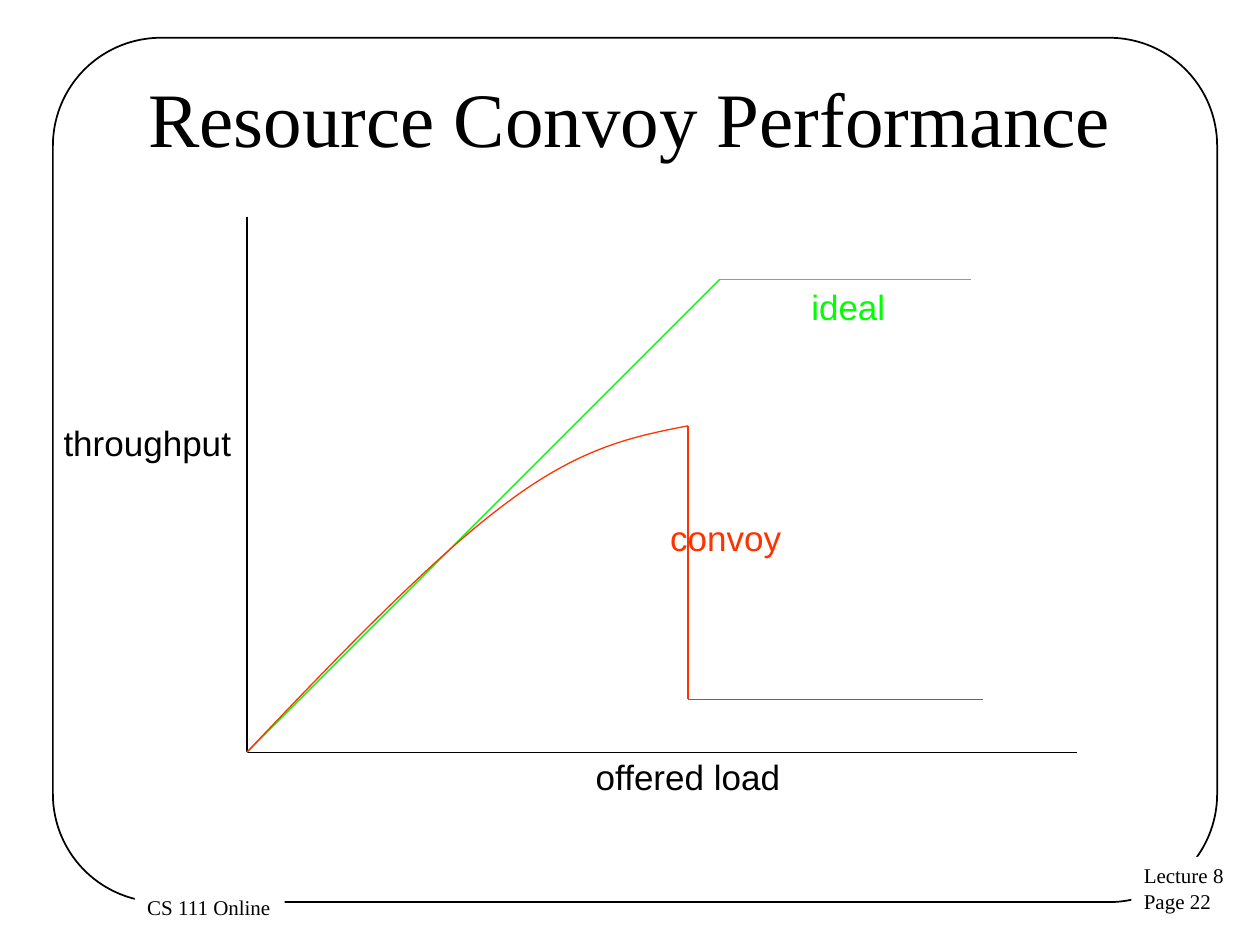
from lxml.etree import SubElement
from pptx import Presentation
from pptx.dml.color import RGBColor
from pptx.enum.shapes import MSO_CONNECTOR, MSO_SHAPE
from pptx.enum.text import MSO_ANCHOR, MSO_AUTO_SIZE, PP_ALIGN
from pptx.oxml.ns import qn
from pptx.util import Inches, Pt

BLACK = RGBColor(0x00, 0x00, 0x00)
WHITE = RGBColor(0xFF, 0xFF, 0xFF)
GREEN = RGBColor(0x00, 0xFF, 0x00)
RED = RGBColor(0xFF, 0x33, 0x00)
SERIF, SANS = "Times New Roman", "Arial"

TITLE = "Resource Convoy Performance"
# lines, box (left, top, width, height)
FOOTERS = [
    (["Lecture 8", "Page 22"], (8.98, 6.8, 0.84, 0.51)),
    (["CS 111 Online"], (1.07, 7.05, 1.19, 0.3)),
]
# text, box, colour, alignment
LABELS = [
    ("throughput", (0.37, 3.3, 1.6, 0.43), BLACK, PP_ALIGN.CENTER),
    ("offered load", (4.63, 5.95, 1.67, 0.43), BLACK, PP_ALIGN.LEFT),
    ("ideal", (6.34, 2.22, 0.79, 0.43), GREEN, PP_ALIGN.LEFT),
    ("convoy", (5.22, 4.05, 1.08, 0.43), RED, PP_ALIGN.LEFT),
]
ORIGIN = (1.96, 5.97)
KNEE = (5.71, 2.22)
PEAK = (5.46, 3.38)
FLOOR = (5.46, 5.55)
# colour, points joined by straight lines
POLYLINES = [
    (BLACK, [(1.96, 1.72), ORIGIN, (8.55, 5.97)]),
    (GREEN, [ORIGIN, KNEE, (7.71, 2.22)]),
    (RED, [PEAK, FLOOR, (7.8, 5.55)]),
]
CONVOY_BEZIERS = [
    (ORIGIN, (2.71, 5.18), (3.46, 4.4), (4.05, 3.97)),
    ((4.05, 3.97), (4.63, 3.54), (5.05, 3.46), PEAK),
]
STEPS = 24


def bezier_point(curve, t):
    weights = ((1 - t) ** 3, 3 * t * (1 - t) ** 2, 3 * t ** 2 * (1 - t), t ** 3)
    return tuple(sum(w * pt[axis] for w, pt in zip(weights, curve)) for axis in (0, 1))


def add_line(slide, start, end, color):
    line = slide.shapes.add_connector(
        MSO_CONNECTOR.STRAIGHT, *(Inches(v) for v in start + end))
    line.line.color.rgb = color
    line.line.width = Pt(0.75)
    SubElement(line._element.spPr, qn("a:effectLst"))


def add_text(slide, lines, box, font, size, color, align=PP_ALIGN.LEFT):
    sp = slide.shapes.add_textbox(*(Inches(v) for v in box))
    tf = sp.text_frame
    tf.word_wrap = False
    tf.auto_size = MSO_AUTO_SIZE.SHAPE_TO_FIT_TEXT
    tf.text = "\n".join(lines)
    for p in tf.paragraphs:
        style(p, font, size, color, align)
    return sp


def style(p, font, size, color, align):
    p.alignment = align
    p.font.name = font
    p.font.size = Pt(size)
    p.font.color.rgb = color


def add_frame(slide):
    sp = slide.shapes.add_shape(
        MSO_SHAPE.ROUNDED_RECTANGLE, *(Inches(v) for v in (0.42, 0.3, 9.24, 6.86)))
    sp.adjustments[0] = 0.125
    sp.shadow.inherit = False
    sp.fill.background()
    sp.line.color.rgb = BLACK
    sp.line.width = Pt(1)


def add_title(slide):
    sp = slide.shapes.title
    sp.left, sp.top, sp.width, sp.height = (Inches(v) for v in (0.5, 0.3, 9, 1.25))
    tf = sp.text_frame
    tf.text = TITLE
    tf.vertical_anchor = MSO_ANCHOR.MIDDLE
    style(tf.paragraphs[0], SERIF, 44, BLACK, PP_ALIGN.CENTER)


def add_convoy_curve(slide):
    points = [bezier_point(curve, i / STEPS)
              for curve in CONVOY_BEZIERS for i in range(1, STEPS + 1)]
    builder = slide.shapes.build_freeform(*(Inches(v) for v in ORIGIN))
    builder.add_line_segments([(Inches(x), Inches(y)) for x, y in points], close=False)
    sp = builder.convert_to_shape()
    sp.shadow.inherit = False
    sp.fill.background()
    sp.line.color.rgb = RED
    sp.line.width = Pt(0.75)


def main():
    prs = Presentation()
    prs.slide_width, prs.slide_height = Inches(10), Inches(7.5)
    slide = prs.slides.add_slide(prs.slide_layouts[5])
    add_frame(slide)
    for lines, box in FOOTERS:
        sp = add_text(slide, lines, box, SERIF, 12, BLACK)
        sp.fill.solid()
        sp.fill.fore_color.rgb = WHITE
    add_title(slide)
    for color, points in POLYLINES:
        for start, end in zip(points, points[1:]):
            add_line(slide, start, end, color)
    add_convoy_curve(slide)
    for text, box, color, align in LABELS:
        add_text(slide, [text], box, SANS, 20, color, align)
    prs.save("out.pptx")


if __name__ == "__main__":
    main()
